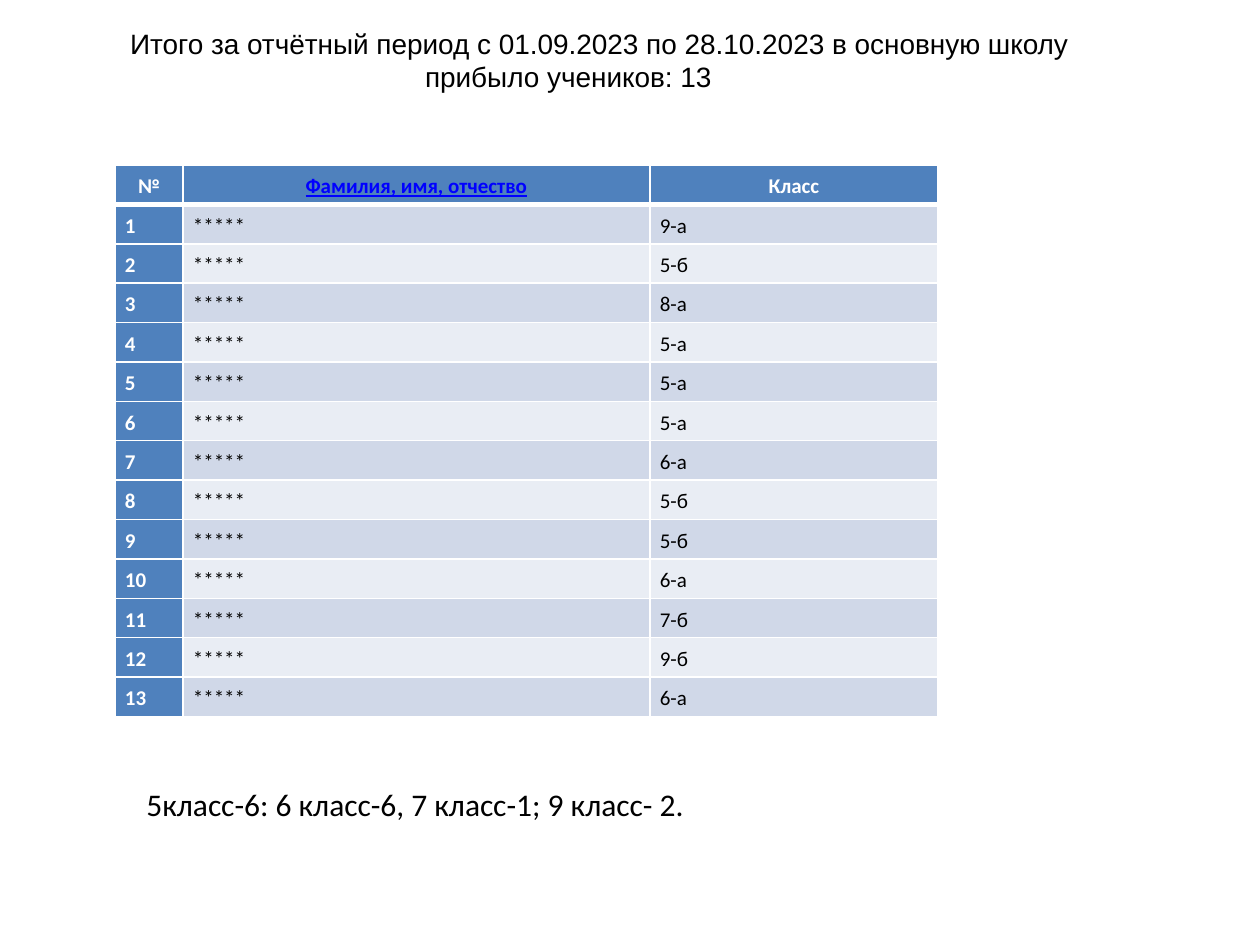
import pptx
import pptx.util
import pptx.dml.color
import pptx.enum.text
import pptx.oxml.ns
import lxml.etree

PX = 914400 // 126
COLORS = {"white": "FFFFFF", "black": "000000", "link": "0000FF",
          "head": "4F81BD", "odd": "D0D8E8", "even": "E9EDF4"}
GRADES = ["9-а", "5-б", "8-а", "5-а", "5-а", "5-а", "6-а",
          "5-б", "5-б", "6-а", "7-б", "9-б", "6-а"]
HEADS = ["№", "Фамилия, имя, отчество", "Класс"]
ALIGN = pptx.enum.text.PP_ALIGN
ANCHOR = pptx.enum.text.MSO_ANCHOR


def color(name):
    return pptx.dml.color.RGBColor.from_string(COLORS[name])


def style(para, font, size, hue="black", bold=False, line=False):
    for run in para.runs:
        run.font.name = font
        run.font.size = pptx.util.Pt(size)
        run.font.color.rgb = color(hue)
        run.font.bold = bold
        run.font.underline = line


def border(cell, low):
    """Rule the cell in white, with a bottom line of low points."""
    props = cell._tc.get_or_add_tcPr()
    qn = pptx.oxml.ns.qn
    for spot, (side, width) in enumerate([("L", 1), ("R", 1), ("T", 1), ("B", low)]):
        line = lxml.etree.Element(qn("a:ln" + side), w=str(pptx.util.Pt(width)))
        fill = lxml.etree.SubElement(line, qn("a:solidFill"))
        lxml.etree.SubElement(fill, qn("a:srgbClr"), val=COLORS["white"])
        props.insert(spot, line)


def fill_cell(cell, text, back, hue, bold, head=False):
    cell.fill.solid()
    cell.fill.fore_color.rgb = color(back)
    cell.margin_left = cell.margin_right = 0 if head else 10 * PX
    cell.margin_top = cell.margin_bottom = 5 * PX
    cell.vertical_anchor = ANCHOR.MIDDLE
    cell.text_frame.text = text
    para = cell.text_frame.paragraphs[0]
    para.line_spacing = 1.15
    para.alignment = ALIGN.CENTER if head else ALIGN.LEFT
    style(para, "Calibri", 12, hue, bold, line=hue == "link")
    border(cell, 3 if head else 1)


def add_title(slide, left, top, width, height):
    title = slide.shapes.title
    title.left, title.top = left * PX, top * PX
    title.width, title.height = width * PX, height * PX
    frame = title.text_frame
    frame.text = ("Итого за отчётный период с 01.09.2023 по 28.10.2023 "
                  "в основную школу прибыло учеников: 13")
    frame.auto_size = pptx.enum.text.MSO_AUTO_SIZE.NONE
    frame.vertical_anchor = ANCHOR.TOP
    frame.margin_top = 10 * PX
    para = frame.paragraphs[0]
    para.alignment = ALIGN.CENTER
    para._p.get_or_add_pPr().set("indent", str(62 * PX))
    style(para, "Arial", 16)


def add_roster(slide, left, top, width, height):
    count = len(GRADES) + 1
    table = slide.shapes.add_table(count, 3, left * PX, top * PX,
                                   width * PX, height * PX).table
    table.first_col = True
    first, last = 68, 288
    for col, size in zip(table.columns, [first, width - first - last, last]):
        col.width = size * PX
    for row in table.rows:
        row.height = height * PX // count
    for col, text in enumerate(HEADS):
        hue = "link" if col == 1 else "white"
        fill_cell(table.cell(0, col), text, "head", hue, True, head=True)
    for row, grade in enumerate(GRADES, 1):
        band = "odd" if row % 2 else "even"
        fill_cell(table.cell(row, 0), str(row), "head", "white", True)
        fill_cell(table.cell(row, 1), "*****", band, "black", False)
        fill_cell(table.cell(row, 2), grade, band, "black", False)


def add_total(slide, left, top, width, height):
    box = slide.shapes.add_textbox(left * PX, top * PX, width * PX, height * PX)
    frame = box.text_frame
    frame.text = "5класс-6: 6 класс-6, 7 класс-1; 9 класс- 2."
    frame.word_wrap = False
    frame.vertical_anchor = ANCHOR.BOTTOM
    frame.margin_bottom = 5 * PX
    style(frame.paragraphs[0], "Calibri", 18)


def main():
    deck = pptx.Presentation()
    deck.slide_width, deck.slide_height = pptx.util.Inches(10), pptx.util.Inches(7.5)
    slide = deck.slides.add_slide(deck.slide_layouts[5])
    add_title(slide, 28, 16, 1081, 186)
    add_roster(slide, 115, 165, 823, 552)
    add_total(slide, 134, 701, 569, 127)
    deck.save("out.pptx")


if __name__ == "__main__":
    main()
